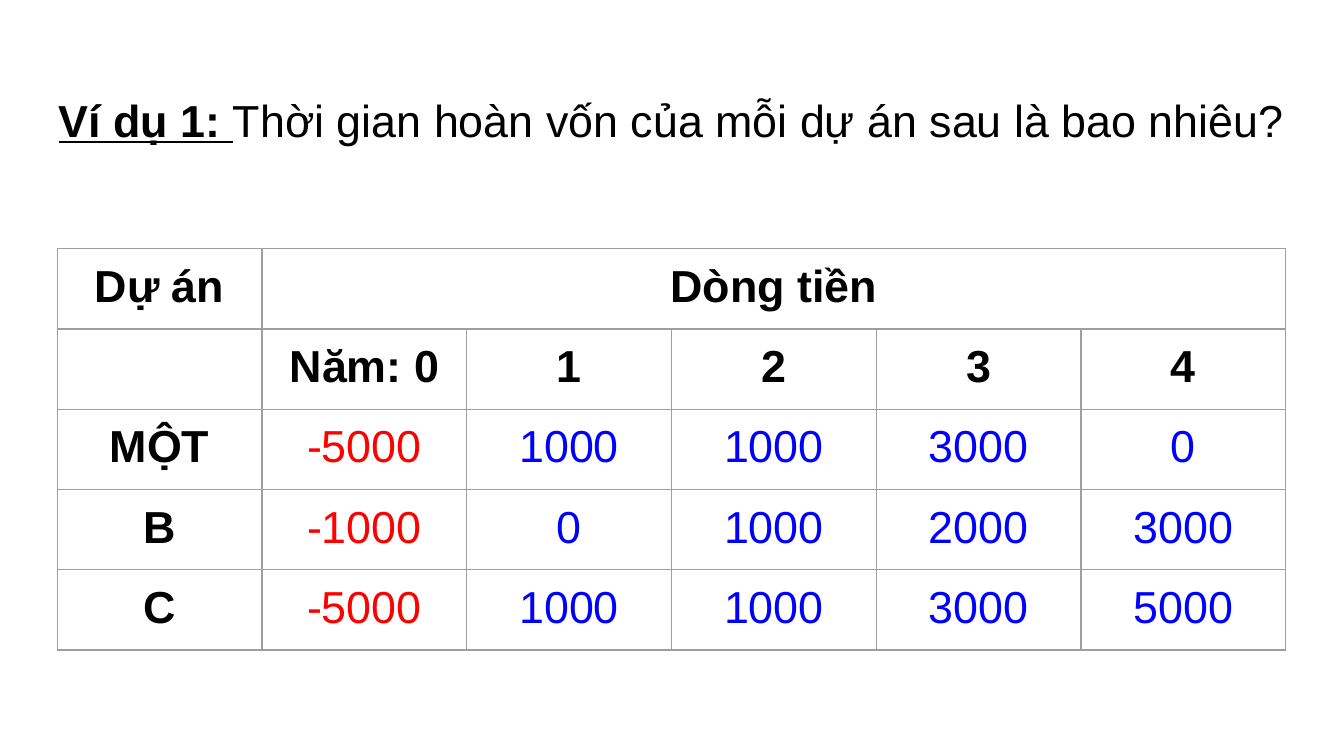
from pptx import Presentation
from pptx.dml.color import RGBColor
from pptx.enum.text import PP_ALIGN
from pptx.oxml import parse_xml
from pptx.oxml.ns import nsdecls
from pptx.util import Cm, Pt

BLACK = RGBColor(0x00, 0x00, 0x00)
RED = RGBColor(0xFF, 0x00, 0x00)
BLUE = RGBColor(0x00, 0x00, 0xFF)
BORDER = RGBColor(0x9E, 0x9E, 0x9E)

# Content
LABEL = "Ví dụ 1: "
QUESTION = "Thời gian hoàn vốn của mỗi dự án sau là bao nhiêu?"
CASH_FLOWS = [
    ["Dự án", "Dòng tiền", "", "", "", ""],
    ["", "Năm: 0", "1", "2", "3", "4"],
    ["MỘT", "-5000", "1000", "1000", "3000", "0"],
    ["B", "-1000", "0", "1000", "2000", "3000"],
    ["C", "-5000", "1000", "1000", "3000", "5000"],
]
HEADER_ROWS = 2

# Layout
COL_W, ROW_H = Cm(3.87), Cm(1.45)
INSET = Cm(0.25)


def add_text(p, text, color=BLACK, bold=False, underline=False, size=24):
    r = p.add_run()
    r.text = text
    r.font.name = "Arial"
    r.font.size = Pt(size)
    r.font.bold = bold
    r.font.underline = underline
    r.font.color.rgb = color


def set_borders(cell, color=BORDER, width=Pt(0.75)):
    tc_pr = cell._tc.get_or_add_tcPr()
    for i, side in enumerate(("lnL", "lnR", "lnT", "lnB")):
        tc_pr.insert(i, parse_xml(
            f'<a:{side} {nsdecls("a")} w="{width}"><a:solidFill>'
            f'<a:srgbClr val="{color}"/></a:solidFill></a:{side}>'))


def cell_format(row, col, text):
    if row < HEADER_ROWS or col == 0:
        return {"bold": True}
    return {"color": RED if text.startswith("-") else BLUE}


prs = Presentation()
prs.slide_width, prs.slide_height = Cm(25.4), Cm(14.29)
s = prs.slides.add_slide(prs.slide_layouts[6])

# Question
sp = s.shapes.add_textbox(Cm(0.86), Cm(1.42), Cm(23.67), Cm(9.5))
tf = sp.text_frame
tf.word_wrap = True
tf.margin_left = tf.margin_right = tf.margin_bottom = INSET
tf.margin_top = Cm(0.33)
p = tf.paragraphs[0]
add_text(p, LABEL, bold=True, underline=True)
add_text(p, QUESTION)

# Cash flow table
n_rows, n_cols = len(CASH_FLOWS), len(CASH_FLOWS[0])
table = s.shapes.add_table(n_rows, n_cols, Cm(1.08), Cm(4.7),
                           COL_W * n_cols, ROW_H * n_rows).table
table.first_row = table.horz_banding = False
for column in table.columns:
    column.width = COL_W
for i, values in enumerate(CASH_FLOWS):
    table.rows[i].height = ROW_H
    for j, text in enumerate(values):
        cell = table.cell(i, j)
        cell.fill.background()
        set_borders(cell)
        cell.margin_left = cell.margin_right = INSET
        cell.margin_top = cell.margin_bottom = INSET
        if text:
            p = cell.text_frame.paragraphs[0]
            p.alignment = PP_ALIGN.CENTER
            add_text(p, text, **cell_format(i, j, text))
table.cell(0, 1).merge(table.cell(0, n_cols - 1))

prs.save("out.pptx")
